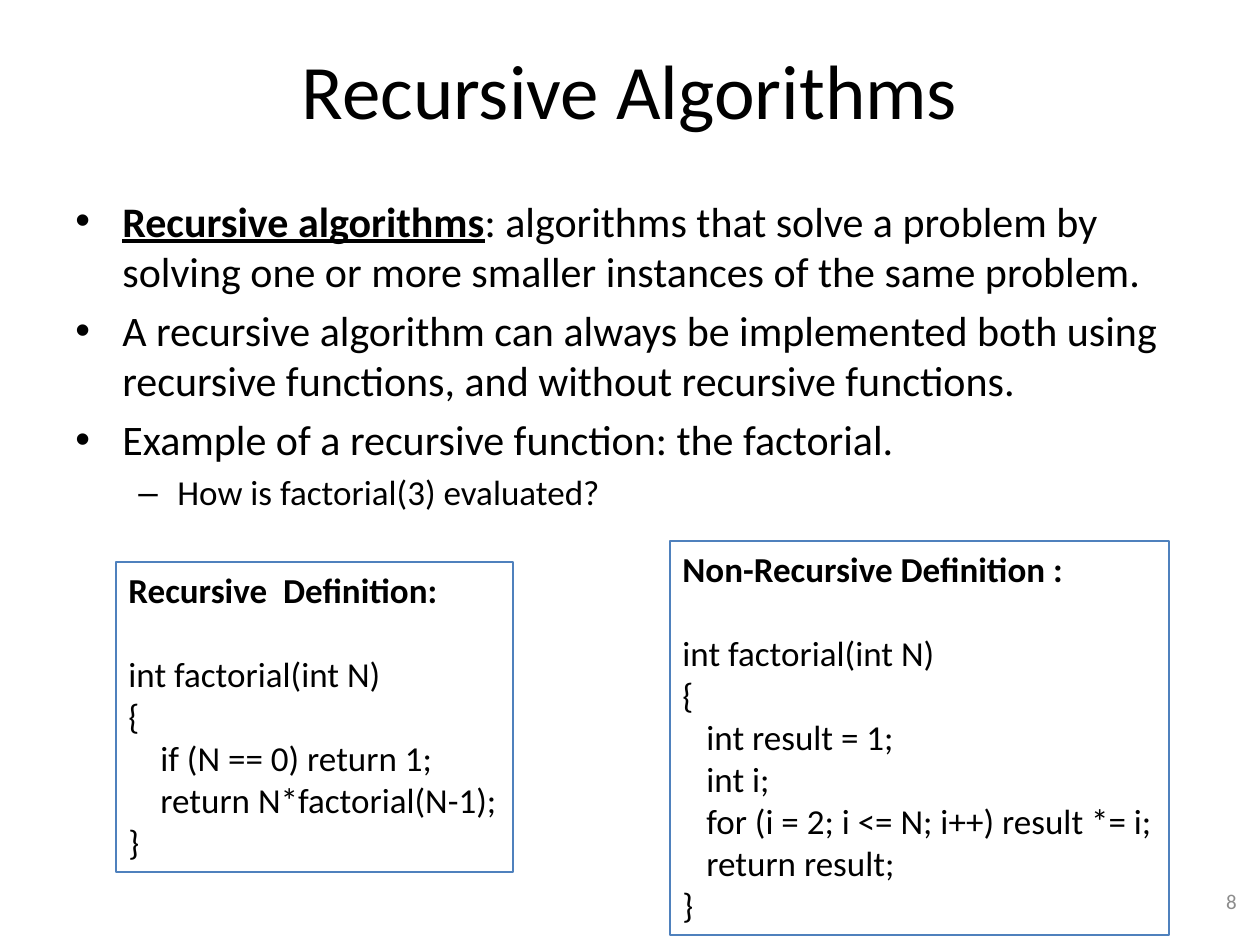
"""Build the slide on recursive algorithms with two factorial listings."""
from pptx import Presentation
from pptx.dml.color import RGBColor
from pptx.enum.shapes import MSO_SHAPE as Shape
from pptx.enum.text import MSO_ANCHOR as Anchor, MSO_AUTO_SIZE as AutoSize, PP_ALIGN as Align
from pptx.oxml.ns import qn
from pptx.util import Emu, Pt
from lxml.etree import SubElement

COLORS = {"text": "000000", "number": "8C8C8C", "border": "4F81BD"}


def px(*values):
    return [Emu(round(value * 914400 / 126)) for value in values]


def style(para, size, color="text", bold=None, align=Align.LEFT):
    para.alignment = align
    para.font.name = "Calibri"
    para.font.size = Pt(size)
    para.font.bold = bold
    para.font.color.rgb = RGBColor.from_string(COLORS[color])


deck = Presentation()
deck.slide_width, deck.slide_height = px(1260, 945)
page = deck.slides.add_slide(deck.slide_layouts[6])

labels = [
    ("Recursive Algorithms", (63, 10, 1134, 158), 44, "text", Align.CENTER),
    ("8", (955, 876, 294, 50), 12, "number", Align.RIGHT),
]
for text, place, size, color, align in labels:
    frame = page.shapes.add_textbox(*px(*place)).text_frame
    frame.word_wrap = True
    frame.vertical_anchor = Anchor.MIDDLE
    frame.text = text
    style(frame.paragraphs[0], size, color, align=align)

points = [
    (0, "Recursive algorithms", ": algorithms that solve a problem by solving one or more "
     "smaller instances of the same problem."),
    (0, "", "A recursive algorithm can always be implemented both using recursive functions, "
     "and without recursive functions."),
    (0, "", "Example of a recursive function: the factorial."),
    (1, "", "How is factorial(3) evaluated?"),
]
levels = [("•", 24, 47, 47), ("–", 20, 102, 39)]
body = page.shapes.add_textbox(*px(63, 189, 1144, 410)).text_frame
body.word_wrap = True
for index, (level, term, text) in enumerate(points):
    para = body.add_paragraph() if index else body.paragraphs[0]
    bullet, size, margin, hanging = levels[level]
    if term:
        span = para.add_run()
        span.text = term
        span.font.bold = span.font.underline = True
    para.add_run().text = text
    style(para, size)
    para.level = level
    para.space_before = Pt(size * 0.2)
    props = para._p.get_or_add_pPr()
    left, indent = px(margin, -hanging)
    props.set("marL", str(left))
    props.set("indent", str(indent))
    SubElement(props, qn("a:buFont")).set("typeface", "Arial")
    SubElement(props, qn("a:buChar")).set("char", bullet)

listings = [
    ((116, 562, 397, 310), "Recursive  Definition:", 32,
     ["if (N == 0) return 1;", "return N*factorial(N-1);"]),
    ((670, 541, 499, 394), "Non-Recursive Definition :", 24,
     ["int result = 1;", "int i;", "for (i = 2; i <= N; i++) result *= i;", "return result;"]),
]
for place, heading, margin, statements in listings:
    box = page.shapes.add_shape(Shape.RECTANGLE, *px(*place))
    box.shadow.inherit = False
    box.fill.background()
    box.line.color.rgb = RGBColor.from_string(COLORS["border"])
    box.line.width = Pt(0.75)
    frame = box.text_frame
    frame.word_wrap = False
    frame.auto_size = AutoSize.SHAPE_TO_FIT_TEXT
    frame.vertical_anchor = Anchor.TOP
    frame.text = "\n".join([heading, "int factorial(int N)", "{", *statements, "}"])
    for para in frame.paragraphs:
        style(para, 20, bold=para.text == heading)
        if para.text in statements:
            para._p.get_or_add_pPr().set("marL", str(px(margin)[0]))
    frame.paragraphs[0].space_after = Pt(24)

deck.save("out.pptx")
